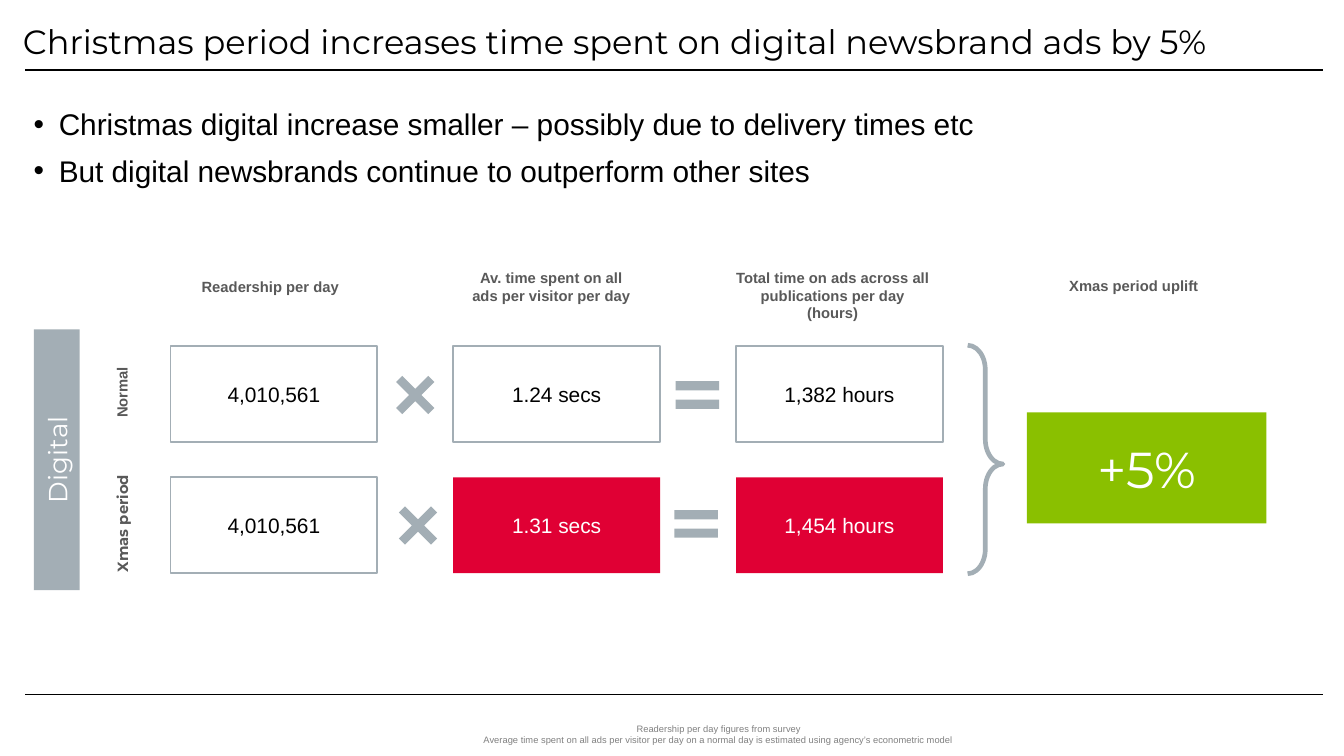
"""Build the slide on Christmas uplift for digital newsbrand ads."""
from dataclasses import dataclass

from lxml import etree
from pptx import Presentation
from pptx.dml.color import RGBColor
from pptx.enum.shapes import MSO_CONNECTOR, MSO_SHAPE
from pptx.enum.text import MSO_ANCHOR, MSO_AUTO_SIZE, PP_ALIGN
from pptx.oxml.ns import qn
from pptx.shapes.autoshape import Shape
from pptx.slide import Slide
from pptx.text.text import TextFrame
from pptx.util import Pt

STRAIGHT = MSO_CONNECTOR.STRAIGHT
BOX = MSO_SHAPE.ROUNDED_RECTANGLE
TIMES = MSO_SHAPE.MATH_MULTIPLY
EQUALS = MSO_SHAPE.MATH_EQUAL
BRACE = MSO_SHAPE.RIGHT_BRACE
LEFT, CENTER = PP_ALIGN.LEFT, PP_ALIGN.CENTER
TOP, MIDDLE = MSO_ANCHOR.TOP, MSO_ANCHOR.MIDDLE
NO_AUTOFIT = MSO_AUTO_SIZE.NONE


@dataclass(frozen=True)
class Theme:
    black: str = "000000"
    white: str = "FFFFFF"
    gray: str = "A3AEB5"
    label: str = "595959"
    note: str = "808080"
    red: str = "E00034"
    green: str = "8AC000"
    heading_font: str = "Montserrat"
    body_font: str = "Arial"
    title_size: float = 18
    list_size: float = 16
    value_size: float = 11.2
    label_size: float = 7.9
    uplift_size: float = 27
    channel_size: float = 14
    note_size: float = 5


@dataclass(frozen=True)
class Area:
    left: float
    top: float
    width: float
    height: float


@dataclass(frozen=True)
class TextStyle:
    size: float
    color: str
    font: str = "Arial"
    bold: bool = False
    align: PP_ALIGN = CENTER
    line_spacing: float | Pt = 1.0


@dataclass(frozen=True)
class Label:
    text: str
    area: Area
    font: str = "Arial"
    rotation: float = 0


@dataclass(frozen=True)
class Operator:
    preset: MSO_SHAPE
    area: Area
    adjustments: tuple[float, ...]


@dataclass(frozen=True)
class Row:
    top: float
    values: tuple[str, str, str]
    highlighted: bool


THEME = Theme()
COLUMN_LEFT, COLUMN_STEP = 91.3, 151.5
CELL_WIDTH, CELL_HEIGHT = 110.8, 51.3
RULE_TOPS = (37.6, 372.2)
BULLETS = (
    "Christmas digital increase smaller – possibly due to delivery times etc",
    "But digital newsbrands continue to outperform other sites",
)
ROWS = (
    Row(185.6, ("4,010,561", "1.24 secs", "1,382 hours"), False),
    Row(255.8, ("4,010,561", "1.31 secs", "1,454 hours"), True),
)
LABELS = (
    Label("Xmas period", Area(30.2, 272.2, 70.6, 16.6), THEME.heading_font, 270),
    Label("Normal", Area(41, 198.7, 54.7, 23), rotation=270),
    Label("Readership per day", Area(99.4, 145.4, 90.7, 16.6)),
    Label("Av. time spent on all ads per visitor per day", Area(243.4, 140.4, 103.7, 26.6)),
    Label("Total time on ads across all publications per day (hours)", Area(386.6, 140.4, 118.8, 36)),
    Label("Xmas period uplift", Area(547.9, 144.7, 118.8, 16.6)),
)
OPERATORS = (
    Operator(TIMES, Area(205.9, 195.1, 33.1, 33.1), (0.14,)),
    Operator(TIMES, Area(207.4, 265, 33.1, 33.1), (0.14,)),
    Operator(EQUALS, Area(357.8, 184.3, 31.7, 54.7), (0.09, 0.09)),
    Operator(EQUALS, Area(357.1, 253.4, 31.7, 54.7), (0.09, 0.09)),
)


def place(shape: Shape, area: Area) -> None:
    """Move and size a shape."""
    shape.left, shape.top = Pt(area.left), Pt(area.top)
    shape.width, shape.height = Pt(area.width), Pt(area.height)


def write(frame: TextFrame, text: str, style: TextStyle, anchor: MSO_ANCHOR = TOP) -> None:
    """Set the text of a frame and format every run."""
    frame.text = text
    frame.word_wrap = True
    frame.auto_size = NO_AUTOFIT
    frame.vertical_anchor = anchor
    for paragraph in frame.paragraphs:
        paragraph.alignment = style.align
        paragraph.line_spacing = style.line_spacing
        paragraph.space_before = Pt(0)
        for run in paragraph.runs:
            run.font.size = Pt(style.size)
            run.font.name = style.font
            run.font.bold = style.bold
            run.font.color.rgb = RGBColor.from_string(style.color)


def add_text(slide: Slide, area: Area, text: str, style: TextStyle) -> Shape:
    """Add a text box."""
    shape = slide.shapes.add_textbox(0, 0, 0, 0)
    place(shape, area)
    write(shape.text_frame, text, style)
    return shape


def add_preset(slide: Slide, preset: MSO_SHAPE, area: Area, adjustments: tuple[float, ...],
               fill: str | None = None, line: str | None = None, weight: float = 1) -> Shape:
    """Add a preset shape without shadow."""
    shape = slide.shapes.add_shape(preset, 0, 0, 0, 0)
    place(shape, area)
    shape.shadow.inherit = False
    for index, value in enumerate(adjustments):
        shape.adjustments[index] = value
    if fill:
        shape.fill.solid()
        shape.fill.fore_color.rgb = RGBColor.from_string(fill)
    else:
        shape.fill.background()
    if line:
        shape.line.color.rgb = RGBColor.from_string(line)
        shape.line.width = Pt(weight)
    else:
        shape.line.fill.background()
    return shape


def add_box(slide: Slide, area: Area, text: str, style: TextStyle, fill: str,
            line: str | None = None) -> Shape:
    """Add a filled box with centred text."""
    shape = add_preset(slide, BOX, area, (0,), fill, line)
    frame = shape.text_frame
    frame.margin_left = frame.margin_right = frame.margin_top = frame.margin_bottom = Pt(4.3)
    write(frame, text, style, MIDDLE)
    return shape


def add_rule(slide: Slide, top: float) -> None:
    """Add a thin horizontal rule."""
    rule = slide.shapes.add_connector(STRAIGHT, Pt(13.5), Pt(top), Pt(708.5), Pt(top))
    rule.line.color.rgb = RGBColor.from_string(THEME.black)
    rule.line.width = Pt(0.75)
    etree.SubElement(rule._element.spPr, qn("a:effectLst"))


def fill_placeholders(slide: Slide) -> None:
    """Write the title and the bulleted list."""
    title, body = slide.placeholders
    place(title, Area(5, 10.1, 731.5, 28.1))
    write(title.text_frame, "Christmas period increases time spent on digital newsbrand ads by 5%",
          TextStyle(THEME.title_size, THEME.black, THEME.heading_font, align=LEFT, line_spacing=0.9))
    place(body, Area(10.8, 55.4, 660.2, 50.4))
    write(body.text_frame, "\n".join(BULLETS),
          TextStyle(THEME.list_size, THEME.black, align=LEFT, line_spacing=0.9))
    for index, paragraph in enumerate(body.text_frame.paragraphs):
        paragraph.space_before = Pt(7.5 if index else 0)
        properties = paragraph._p.get_or_add_pPr()
        properties.set("marL", str(Pt(13.5)))
        properties.set("indent", str(Pt(-13.5)))


def main() -> None:
    """Build and save the presentation."""
    presentation = Presentation()
    presentation.slide_width, presentation.slide_height = Pt(720), Pt(405)
    slide = presentation.slides.add_slide(presentation.slide_layouts[1])
    fill_placeholders(slide)
    for top in RULE_TOPS:
        add_rule(slide, top)
    for row in ROWS:
        for column, value in enumerate(row.values):
            red = row.highlighted and column > 0
            style = TextStyle(THEME.value_size, THEME.white if red else THEME.black, line_spacing=Pt(12.8))
            area = Area(COLUMN_LEFT + column * COLUMN_STEP, row.top, CELL_WIDTH, CELL_HEIGHT)
            add_box(slide, area, value, style, THEME.red if red else THEME.white, None if red else THEME.gray)
    for operator in OPERATORS:
        add_preset(slide, operator.preset, operator.area, operator.adjustments, THEME.gray)
    add_preset(slide, BRACE, Area(518.4, 185, 18.9, 122.4), (0.7, 0.52), line=THEME.gray, weight=2.5)
    add_box(slide, Area(550.1, 221, 128.4, 59.4), "+5%",
            TextStyle(THEME.uplift_size, THEME.white, THEME.heading_font), THEME.green)
    for label in LABELS:
        style = TextStyle(THEME.label_size, THEME.label, label.font, bold=True)
        add_text(slide, label.area, label.text, style).rotation = label.rotation
    channel = add_box(slide, Area(-39.4, 234, 139.7, 24.5), "Digital",
                      TextStyle(THEME.channel_size, THEME.white, THEME.heading_font), THEME.gray)
    channel.rotation = 270
    note = add_text(slide, Area(91.4, 385.9, 587.5, 19), "Readership per day figures from survey\vAverage time spent on all ads "
                    "per visitor per day on a normal day is estimated using agency’s econometric model",
                    TextStyle(THEME.note_size, THEME.note))
    note.text_frame.margin_top = Pt(1.5)
    presentation.save("out.pptx")


if __name__ == "__main__":
    main()
